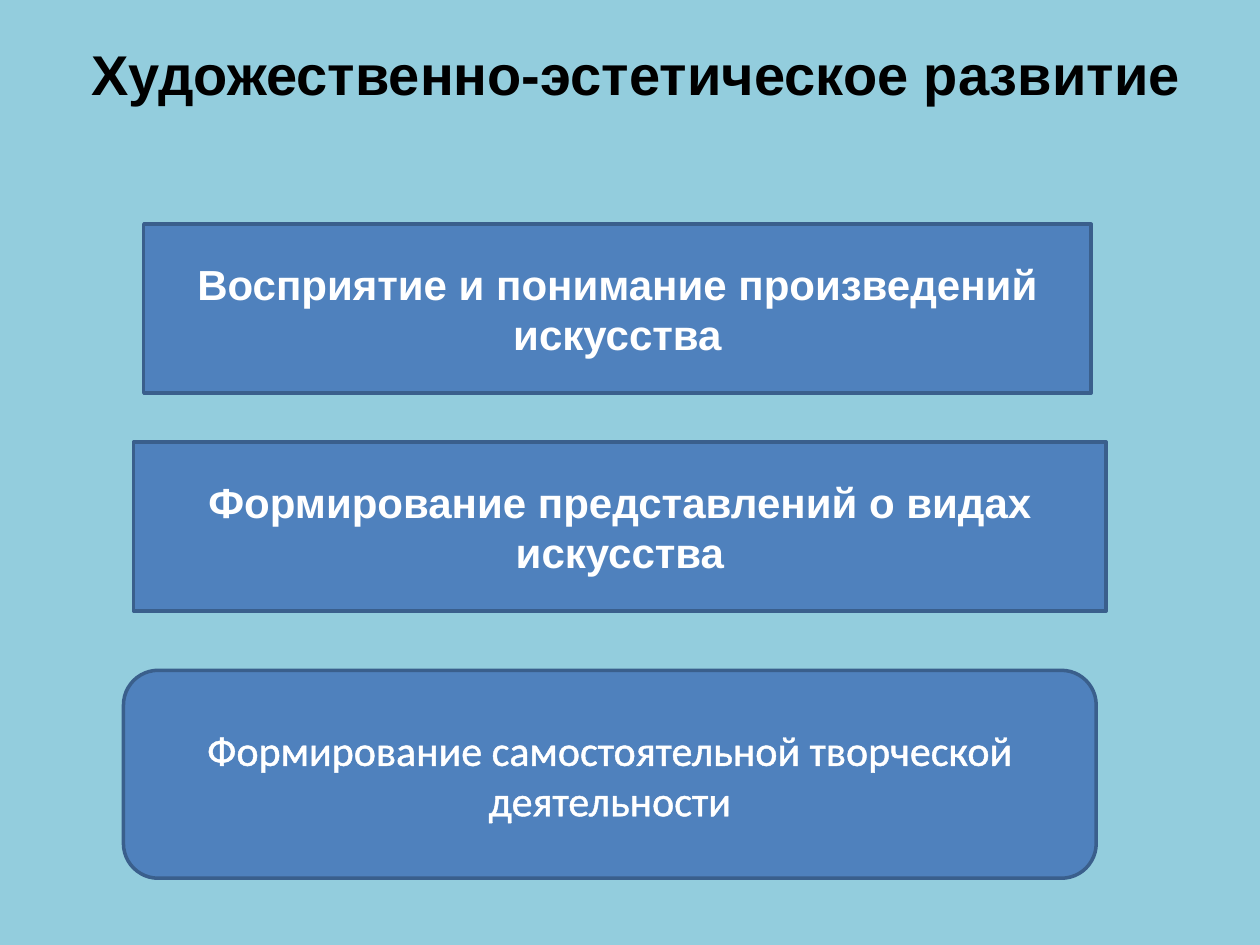
import pptx
import pptx.dml.color
import pptx.enum.shapes
import pptx.enum.text
import pptx.oxml
import pptx.oxml.ns
import pptx.util

WIDE, HIGH = 10, 7.5
SHAPE = pptx.enum.shapes.MSO_SHAPE
BLOCKS = [
    (SHAPE.RECTANGLE, (1.14, 1.78, 7.52, 1.34), "Arial", True,
     "Восприятие и понимание произведений искусства"),
    (SHAPE.RECTANGLE, (1.06, 3.51, 7.72, 1.34), "Arial", True,
     "Формирование представлений о видах искусства"),
    (SHAPE.ROUNDED_RECTANGLE, (0.98, 5.32, 7.72, 1.65), "Calibri", False,
     "Формирование самостоятельной творческой деятельности"),
]


def paint(color, code):
    color.rgb = pptx.dml.color.RGBColor.from_string(code)


def place(shape, box):
    shape.left, shape.top, shape.width, shape.height = map(pptx.util.Inches, box)


def write(shape, text, face, size, code, bold):
    frame = shape.text_frame
    frame.word_wrap = True
    frame.auto_size = pptx.enum.text.MSO_AUTO_SIZE.NONE
    frame.vertical_anchor = pptx.enum.text.MSO_ANCHOR.MIDDLE
    frame.text = text
    para = frame.paragraphs[0]
    para.alignment = pptx.enum.text.PP_ALIGN.CENTER
    para.font.name = face
    para.font.size = pptx.util.Pt(size)
    para.font.bold = bold
    paint(para.font.color, code)


def outline(shape, code, width):
    """Draw a line around the letters of the shape's text."""
    line = pptx.oxml.parse_xml(
        f'<a:ln {pptx.oxml.ns.nsdecls("a")} w="{pptx.util.Pt(width)}">'
        f'<a:solidFill><a:srgbClr val="{code}"/></a:solidFill></a:ln>')
    run = shape.text_frame.paragraphs[0].runs[0]
    run.font._element.insert(0, line)


def block(slide, kind, box, face, bold, text):
    shape = slide.shapes.add_shape(kind, *map(pptx.util.Inches, box))
    shape.shadow.inherit = False
    shape.fill.solid()
    paint(shape.fill.fore_color, "4F81BD")
    paint(shape.line.color, "3A5F8C")
    shape.line.width = pptx.util.Pt(2)
    write(shape, text, face, 24, "FFFFFF", bold)
    return shape


def main():
    deck = pptx.Presentation()
    deck.slide_width = pptx.util.Inches(WIDE)
    deck.slide_height = pptx.util.Inches(HIGH)
    slide = deck.slides.add_slide(deck.slide_layouts[5])
    slide.background.fill.solid()
    paint(slide.background.fill.fore_color, "93CDDD")

    title = slide.shapes.title
    place(title, (0.55, 0.16, 9, 0.84))
    write(title, "Художественно-эстетическое развитие", "Arial", 32, "000000", True)

    shapes = [block(slide, *item) for item in BLOCKS]
    outline(shapes[-1], "FFFFFF", 1.45)
    deck.save("out.pptx")


if __name__ == "__main__":
    main()
